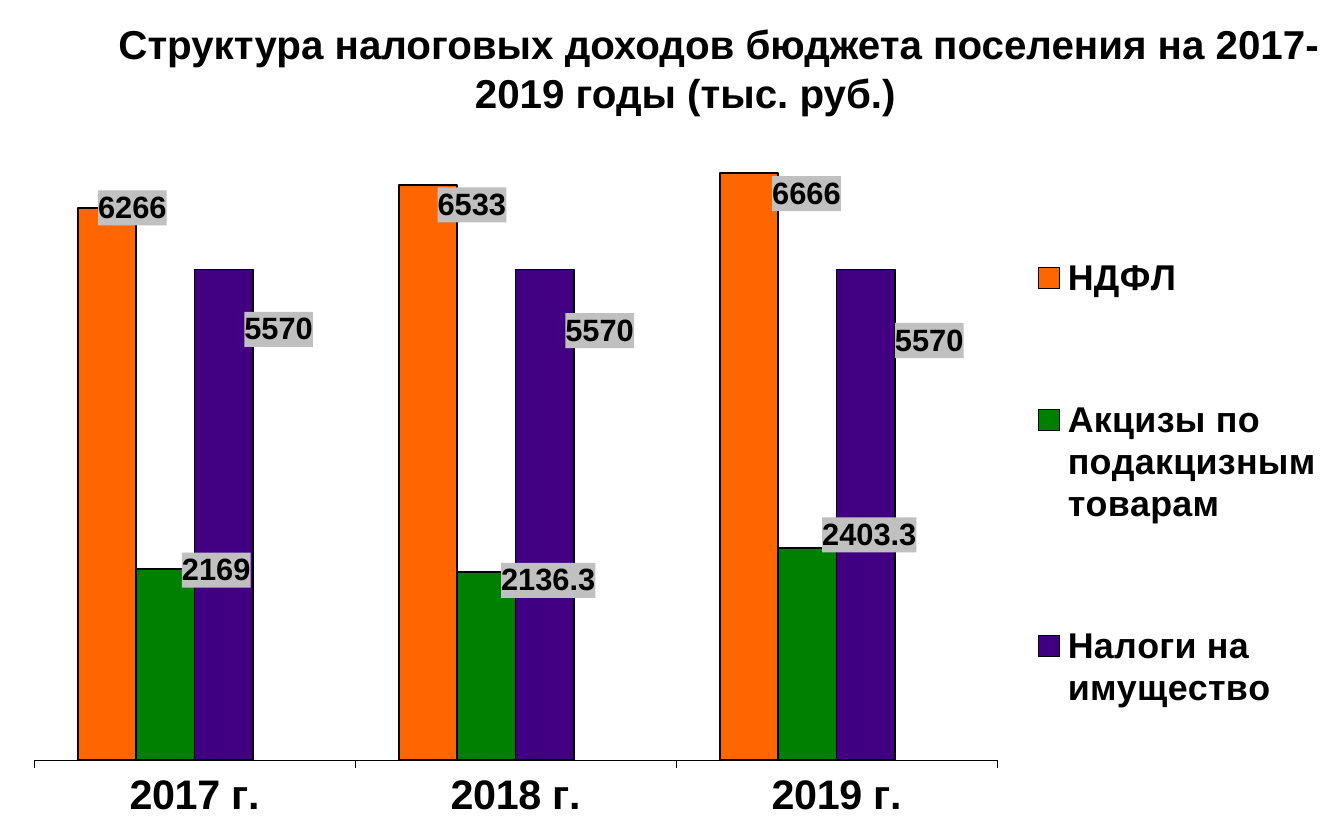
import pptx
import pptx.chart.data
import pptx.dml.color
import pptx.enum.chart
import pptx.enum.text
import pptx.oxml
import pptx.oxml.ns
import pptx.util

Pt = pptx.util.Pt
qn = pptx.oxml.ns.qn
NS = pptx.oxml.ns.nsdecls("c", "a")
C15 = "http://schemas.microsoft.com/office/drawing/2012/chart"

COLORS = {"text": "000000", "label": "C0C0C0", "income": "FF6600",
          "excise": "008000", "property": "410082", "spare": "FFCC00"}
YEARS = ["2017 г.", "2018 г.", "2019 г."]
# name, colour, values, label shifts from the bar end in points
SERIES = [
    ("НДФЛ", "income", (6266, 6533, 6666),
     ((13.7, 12), (23.6, 23), (30.8, 23.2))),
    ("Акцизы по подакцизным товарам", "excise", (2169, 2136.3, 2403.3),
     ((27.3, 12.8), (33.2, 16.8), (33.2, 5))),
    ("Налоги на имущество", "property", (5570, 5570, 5570),
     ((29.5, 44.3), (29.5, 44.9), (34, 50.2))),
    ("Series 4", "spare", (None, None, None), ()),
]
TITLE_BOX = (14.4, 10.2, 705.6, 60)
CHART_BOX = (4.3, 69.8, 712, 376.6)
PLOT_BOX = (18.2, 77, 516, 330.2)
LEGEND_BOX = (550.3, 84.3, 161, 349)


def rgb(name):
    return pptx.dml.color.RGBColor.from_string(COLORS[name])


def set_font(font, size):
    for key, value in {"name": "Arial", "size": Pt(size), "bold": True}.items():
        setattr(font, key, value)
    font.color.rgb = rgb("text")


def remove_children(parent, tag):
    for old in parent.findall(qn(tag)):
        parent.remove(old)


def set_layout(parent, index, values, inner=False):
    """Put a manual layout into a chart part; values are x, y and maybe w, h."""
    remove_children(parent, "c:layout")
    parts = '<c:layoutTarget val="inner"/>' if inner else ""
    if len(values) == 4:
        parts += '<c:xMode val="edge"/><c:yMode val="edge"/>'
    parts += "".join(f'<c:{key} val="{value:.4f}"/>' for key, value in zip("xywh", values))
    parent.insert(index, pptx.oxml.parse_xml(
        f"<c:layout {NS}><c:manualLayout>{parts}</c:manualLayout></c:layout>"))


def within(box, outer):
    """Box as fractions of the outer box."""
    x, y, w, h = outer
    return ((box[0] - x) / w, (box[1] - y) / h, box[2] / w, box[3] / h)


def add_title(slide, box):
    tf = slide.shapes.add_textbox(*map(Pt, box)).text_frame
    for key, value in {"word_wrap": True, "margin_top": 0, "margin_bottom": 0,
                       "vertical_anchor": pptx.enum.text.MSO_ANCHOR.TOP}.items():
        setattr(tf, key, value)
    p = tf.paragraphs[0]
    p.alignment = pptx.enum.text.PP_ALIGN.CENTER
    p.line_spacing = Pt(26.2)
    p._p.get_or_add_pPr().set("indent", str(Pt(36)))
    r = p.add_run()
    r.text = "Структура налоговых доходов бюджета поселения на 2017-2019 годы (тыс. руб.)"
    set_font(r.font, 21.6)


def style_label(label, node):
    """Format one label, or all labels of a series, with a grey background."""
    set_font(label.font, 16.5)
    label.position = pptx.enum.chart.XL_LABEL_POSITION.OUTSIDE_END
    remove_children(node, "c:spPr")
    node.find(qn("c:txPr")).addprevious(pptx.oxml.parse_xml(
        f'<c:spPr {NS}><a:solidFill><a:srgbClr val="{COLORS["label"]}"/>'
        "</a:solidFill><a:ln><a:noFill/></a:ln></c:spPr>"))


def hide_leader_lines(node):
    remove_children(node, "c:showLeaderLines")
    remove_children(node, "c:extLst")
    node.append(pptx.oxml.parse_xml(f'<c:showLeaderLines {NS} val="0"/>'))
    node.append(pptx.oxml.parse_xml(
        f'<c:extLst {NS}><c:ext uri="{{CE6537A1-D6FC-4f65-9D91-7224C49458BB}}" '
        f'xmlns:c15="{C15}"><c15:showLeaderLines val="0"/></c:ext></c:extLst>'))


def style_series(series, color, shifts, box):
    series.format.fill.solid()
    series.format.fill.fore_color.rgb = rgb(color)
    series.format.line.color.rgb = rgb("text")
    series.format.line.width = Pt(0.97)
    labels = series.data_labels
    labels.show_value = True
    labels_node = series._element.find(qn("c:dLbls"))
    style_label(labels, labels_node)
    hide_leader_lines(labels_node)
    for i, (dx, dy) in enumerate(shifts):
        label = series.points[i].data_label
        set_font(label.font, 16.5)
        node = labels_node.xpath(f"c:dLbl[c:idx/@val={i}]")[0]
        style_label(label, node)
        set_layout(node, 1, (dx / box[2], dy / box[3]))


def style_axes(chart):
    axis = chart.value_axis
    for key, value in {"visible": False, "has_major_gridlines": False,
                       "minimum_scale": 0, "maximum_scale": 7000}.items():
        setattr(axis, key, value)
    axis = chart.category_axis
    axis.tick_label_position = pptx.enum.chart.XL_TICK_LABEL_POSITION.LOW
    axis.major_tick_mark = pptx.enum.chart.XL_TICK_MARK.OUTSIDE
    axis.format.line.color.rgb = rgb("text")
    axis.format.line.width = Pt(0.25)
    set_font(axis.tick_labels.font, 22.1)


def style_legend(chart, box):
    chart.has_legend = True
    legend = chart.legend
    legend.position = pptx.enum.chart.XL_LEGEND_POSITION.RIGHT
    legend.include_in_layout = False
    set_font(legend.font, 19.2)
    node = legend._element
    set_layout(node, 1, within(LEGEND_BOX, box))
    node.insert(1, pptx.oxml.parse_xml(
        f'<c:legendEntry {NS}><c:idx val="3"/><c:delete val="1"/></c:legendEntry>'))


def add_tax_chart(slide, box):
    data = pptx.chart.data.CategoryChartData()
    data.categories = YEARS
    for name, _, values, _ in SERIES:
        data.add_series(name, values)
    chart = slide.shapes.add_chart(
        pptx.enum.chart.XL_CHART_TYPE.COLUMN_CLUSTERED, *map(Pt, box), data).chart
    chart.has_title = False
    set_font(chart.font, 21.6)
    plot = chart.plots[0]
    plot.gap_width = 150
    plot.overlap = 0
    plot.vary_by_categories = False
    for series, (_, color, _, shifts) in zip(plot.series, SERIES):
        style_series(series, color, shifts, box)
    style_axes(chart)
    style_legend(chart, box)
    area = chart._chartSpace.xpath("c:chart/c:plotArea")[0]
    set_layout(area, 0, within(PLOT_BOX, box), inner=True)


def main():
    prs = pptx.Presentation()
    prs.slide_width, prs.slide_height = Pt(720), Pt(450)
    slide = prs.slides.add_slide(prs.slide_layouts[6])
    add_tax_chart(slide, CHART_BOX)
    add_title(slide, TITLE_BOX)
    prs.save("out.pptx")


if __name__ == "__main__":
    main()
